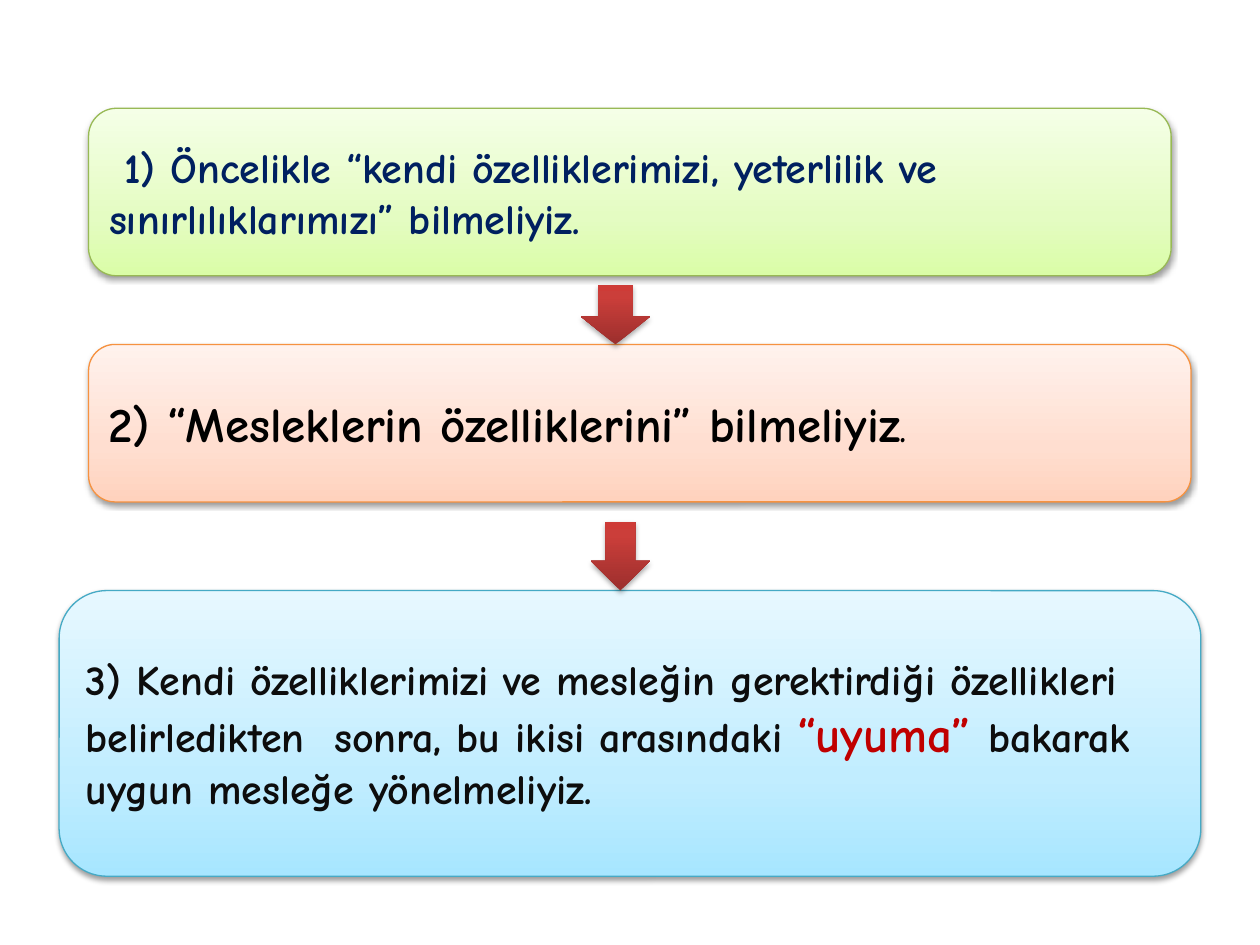
from lxml import etree
from pptx import Presentation
from pptx.dml.color import RGBColor
from pptx.enum.shapes import MSO_SHAPE as SHAPE
from pptx.enum.text import MSO_ANCHOR as ANCHOR, PP_ALIGN as ALIGN
from pptx.util import Pt

NS = "http://schemas.openxmlformats.org/drawingml/2006/main"


def color(value):
    return RGBColor.from_string(value)


def add_shaded(kind, box, stops, opacity):
    sp = slide.shapes.add_shape(kind, *[Pt(v) for v in box])
    sp.line.fill.background()
    gs = "".join(
        f'<a:gs pos="{pos * 1000}"><a:srgbClr val="{rgb}"/></a:gs>' for pos, rgb in stops
    )
    sp._element.spPr.insert(2, etree.fromstring(
        f'<a:gradFill xmlns:a="{NS}" rotWithShape="1"><a:gsLst>{gs}</a:gsLst>'
        '<a:lin ang="16200000" scaled="0"/></a:gradFill>'
    ))
    sp._element.spPr.append(etree.fromstring(
        f'<a:effectLst xmlns:a="{NS}"><a:outerShdw blurRad="{Pt(3.1)}" dist="{Pt(1.7)}" '
        'dir="5400000" rotWithShape="0"><a:srgbClr val="000000">'
        f'<a:alpha val="{opacity * 1000}"/></a:srgbClr></a:outerShdw></a:effectLst>'
    ))
    return sp


prs = Presentation()
prs.slide_width, prs.slide_height = Pt(720), Pt(540)
slide = prs.slides.add_slide(prs.slide_layouts[6])

steps = [
    ((50.6, 61.9, 618.6, 95.7), "98B955",
     [(0, "DAFDA7"), (35, "E4FCC2"), (100, "F5FFE7")],
     [(" 1) Öncelikle “kendi özelliklerimizi, yeterlilik ve sınırlılıklarımızı” bilmeliyiz.",
       24, "002060", True)]),
    ((50.6, 196.8, 630, 90), "F69240",
     [(0, "FFD2BD"), (35, "FFDED0"), (100, "FFF2ED")],
     [("2) “Mesleklerin özelliklerini” bilmeliyiz", 28, "000000", True),
      (".", 28, "000000", False)]),
    ((33.8, 337.5, 652.4, 163.2), "46AAC5",
     [(0, "A7E6FF"), (35, "C1EDFF"), (100, "E7F8FF")],
     [("3) Kendi özelliklerimizi ve mesleğin gerektirdiği özellikleri "
       "belirledikten  sonra, bu ikisi arasındaki ", 24, "0D0D0D", True),
      ("“uyuma” ", 28, "C00000", True),
      ("bakarak uygun mesleğe yönelmeliyiz.", 24, "0D0D0D", True)]),
]

for box, outline, stops, runs in steps:
    sp = add_shaded(SHAPE.ROUNDED_RECTANGLE, box, stops, 38)
    sp.line.color.rgb = color(outline)
    sp.line.width = Pt(0.75)
    tf = sp.text_frame
    tf.word_wrap = True
    tf.vertical_anchor = ANCHOR.MIDDLE
    p = tf.paragraphs[0]
    p.alignment = ALIGN.LEFT
    p.font.name = "Comic Neue"
    for text, size, rgb, bold in runs:
        r = p.add_run()
        r.text = text
        r.font.name = "Comic Neue"
        r.font.size = Pt(size)
        r.font.bold = bold
        r.font.color.rgb = color(rgb)

red = [(0, "9C2F2D"), (80, "CB3E3A"), (100, "CE3B37")]
arrows = [((332, 163.1, 39.4, 33.7), 0.47), ((337.6, 298.1, 33.8, 39.4), 0.5)]
for box, head in arrows:
    sp = add_shaded(SHAPE.DOWN_ARROW, box, red, 35)
    sp.adjustments[1] = head

prs.save("out.pptx")
